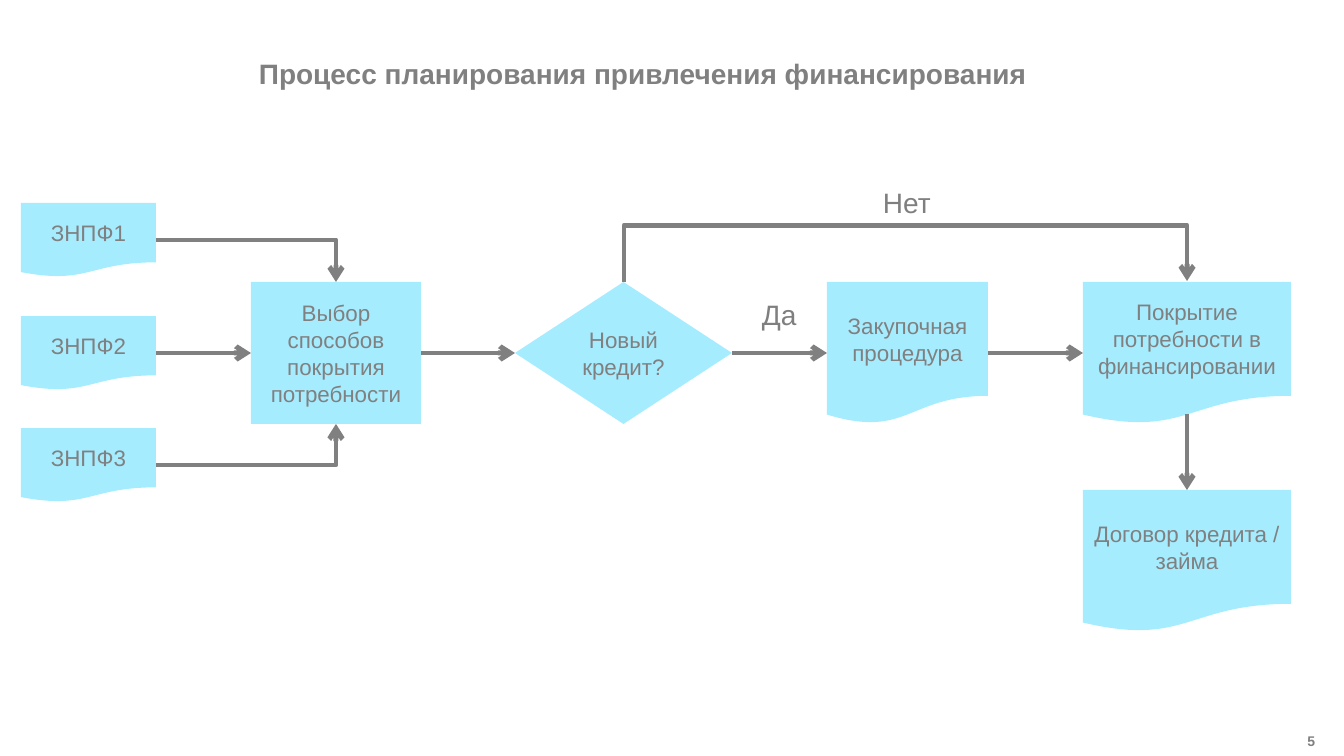
import lxml.etree
import pptx
import pptx.dml.color
import pptx.enum.shapes
import pptx.enum.text
import pptx.oxml.ns
import pptx.util

PX = 914400 / 100.8
GRAY, LABEL_GRAY, CYAN = "808080", "7F7F7F", "A6ECFF"
SHAPE = pptx.enum.shapes.MSO_SHAPE
CONNECTOR = pptx.enum.shapes.MSO_CONNECTOR
ALIGN = pptx.enum.text.PP_ALIGN
ANCHOR = pptx.enum.text.MSO_ANCHOR
color = pptx.dml.color.RGBColor.from_string
qn = pptx.oxml.ns.qn
TOP, LEFT, BOTTOM, RIGHT = range(4)


def write(frame, words, size, ink=GRAY, align=ALIGN.LEFT, bold=False):
    paragraph = frame.paragraphs[0]
    paragraph.alignment = align
    run = paragraph.add_run()
    run.text = words
    run.font.name = "Arial"
    run.font.size = pptx.util.Pt(size)
    run.font.bold = bold
    run.font.color.rgb = color(ink)


def arrow(kind, *ends):
    """Add a gray connector from (x1, y1) to (x2, y2) in px, with an open head."""
    connector = slide.shapes.add_connector(kind, *[round(v * PX) for v in ends])
    connector.line.color.rgb = color(GRAY)
    connector.line.width = pptx.util.Pt(3.5)
    properties = connector._element.spPr
    lxml.etree.SubElement(properties.find(qn("a:ln")), qn("a:tailEnd"), type="arrow")
    lxml.etree.SubElement(properties, qn("a:effectLst"))
    return connector


deck = pptx.Presentation()
deck.slide_width, deck.slide_height = round(1344 * PX), round(756 * PX)
slide = deck.slides.add_slide(deck.slide_layouts[6])

# Title, page number and branch labels
for words, box, size, ink, align, bold, wrap, anchor, spacing in [
    ("Процесс планирования привлечения финансирования", (249, 17, 796, 119),
     20, GRAY, ALIGN.LEFT, True, True, ANCHOR.MIDDLE, 0.8),
    ("5", (1212, 728, 113, 28), 10, GRAY, ALIGN.RIGHT, True, True, ANCHOR.TOP, 1.0),
    ("Да", (752, 293, 55, 44), 20, LABEL_GRAY, ALIGN.LEFT, False, False, ANCHOR.TOP, 1.0),
    ("Нет", (873, 181, 69, 44), 20, LABEL_GRAY, ALIGN.LEFT, False, False, ANCHOR.TOP, 1.0),
]:
    frame = slide.shapes.add_textbox(*[round(v * PX) for v in box]).text_frame
    frame.word_wrap = wrap
    frame.vertical_anchor = anchor
    frame.paragraphs[0].line_spacing = spacing
    write(frame, words, size, ink, align, bold)

# Process steps
ROW_TOP, STEP_HEIGHT = 282, 142
ROW_MIDDLE = ROW_TOP + STEP_HEIGHT // 2
ROW_BOTTOM = ROW_TOP + STEP_HEIGHT
document = SHAPE.FLOWCHART_DOCUMENT
steps = {}
for step, kind, words, box in [
    ("request1", document, "ЗНПФ1", (21, 203, 135, 74)),
    ("request2", document, "ЗНПФ2", (21, 316, 135, 74)),
    ("request3", document, "ЗНПФ3", (21, 428, 135, 74)),
    ("choice", SHAPE.RECTANGLE, "Выбор способов покрытия потребности",
     (251, ROW_TOP, 170, STEP_HEIGHT)),
    ("new_loan", SHAPE.FLOWCHART_DECISION, "Новый кредит?",
     (515, ROW_TOP, 217, STEP_HEIGHT)),
    ("procurement", document, "Закупочная процедура",
     (827, ROW_TOP, 161, STEP_HEIGHT)),
    ("coverage", document, "Покрытие потребности в финансировании",
     (1083, ROW_TOP, 208, STEP_HEIGHT)),
    ("contract", document, "Договор кредита / займа", (1083, 490, 208, STEP_HEIGHT)),
]:
    shape = slide.shapes.add_shape(kind, *[round(v * PX) for v in box])
    shape.shadow.inherit = False
    shape.fill.solid()
    shape.fill.fore_color.rgb = color(CYAN)
    shape.line.fill.background()
    shape.text_frame.word_wrap = True
    shape.text_frame.vertical_anchor = ANCHOR.MIDDLE
    write(shape.text_frame, words, 16, align=ALIGN.CENTER)
    steps[step] = shape

# Straight arrows along the main row
for start, x1, end, x2 in [
    ("request2", 156, "choice", 251),
    ("choice", 421, "new_loan", 515),
    ("new_loan", 732, "procurement", 827),
    ("procurement", 988, "coverage", 1083),
]:
    flow = arrow(CONNECTOR.STRAIGHT, x1, ROW_MIDDLE, x2, ROW_MIDDLE)
    flow.begin_connect(steps[start], RIGHT)
    flow.end_connect(steps[end], LEFT)

# The wavy lower edge of the document lies above its frame
to_contract = arrow(CONNECTOR.STRAIGHT, 1187, 414, 1187, 490)
to_contract.end_connect(steps["contract"], TOP)

# Outer requests turn once into the choice step
for y1, y2 in [(240, ROW_TOP), (465, ROW_BOTTOM)]:
    turn = arrow(CONNECTOR.ELBOW, 156, y1, 336, y2)
    turn._element.spPr.find(qn("a:prstGeom")).set("prst", "bentConnector2")

# The "no" branch is a quarter-turned elbow rising 57 px, given in units of its 1 px width
bypass = arrow(CONNECTOR.ELBOW, 906, 563, 905, 0)
bypass._element.spPr.find(qn("a:xfrm")).set("rot", "5400000")
adjustments = bypass._element.spPr.find(qn("a:prstGeom")).get_or_add_avLst()
lxml.etree.SubElement(adjustments, qn("a:gd"), name="adj1", fmla="val 5700000")

deck.save("out.pptx")
